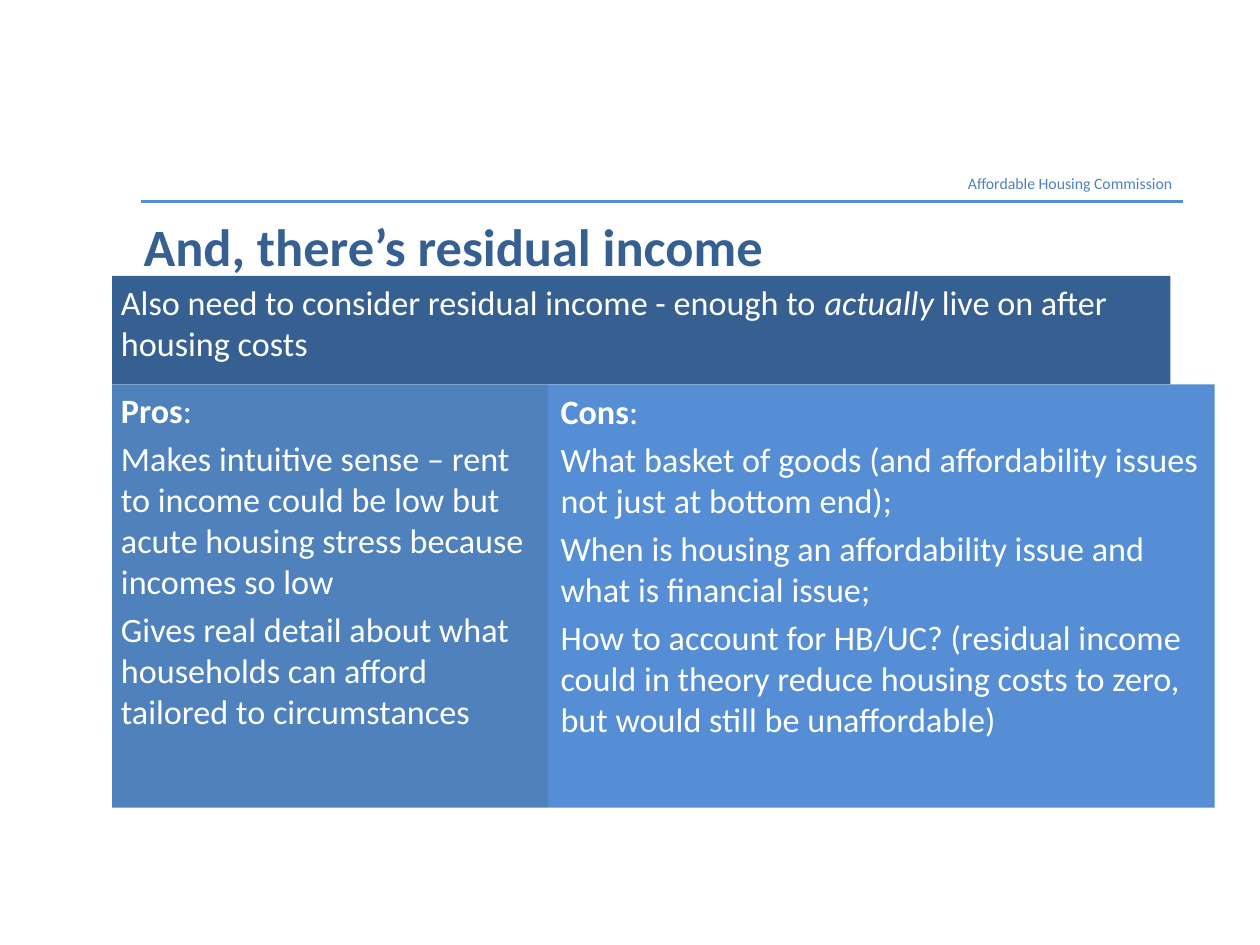
import pptx
import pptx.util
import pptx.dml.color
import pptx.enum.shapes
import pptx.enum.text
import lxml.etree
from pptx.util import Inches, Pt

THEME = {
    "font": "Calibri", "white": "FFFFFF", "navy": "376092",
    "blue": "4F81BD", "sky": "558ED5",
    "head": 9, "title": 30, "body": 19.5, "gap": 4, "rule": 2,
}

# Each paragraph is a list of (text, style) runs; style is "", "b" or "i".
HEAD = [[("Affordable Housing Commission", "")]]
TITLE = [[("And, there’s residual income", "b")]]
LEAD = [[("Also need to consider residual income - enough to ", ""),
         ("actually", "i"), (" live on after housing costs", "")]]
PROS = [
    [("Pros", "b"), (":", "")],
    [("Makes intuitive sense – rent to income could be low but acute "
      "housing stress because incomes so low", "")],
    [("Gives real detail about what households can afford tailored to "
      "circumstances", "")],
]
CONS = [
    [("Cons", "b"), (":", "")],
    [("What basket of goods (and affordability issues not just at bottom "
      "end);", "")],
    [("When is housing an affordability issue and what is financial "
      "issue;", "")],
    [("How to account for HB/UC? (residual income could in theory reduce "
      "housing costs to zero, but would still be unaffordable)", "")],
]

LEFT, TOP = 0.89, 2.19
LEAD_W, LEAD_H = 8.4, 0.86
PROS_W, CONS_W, PANEL_H = 3.46, 5.29, 3.36
WIDE, TIGHT = (0.1, 0.05), (0.07, 0.04)


def color(name):
    return pptx.dml.color.RGBColor.from_string(THEME[name])


def write(shape, paras, size, ink, inset, gap=0):
    """Fill the shape with styled paragraphs, aligned left and to the top."""
    frame = shape.text_frame
    frame.word_wrap = True
    frame.vertical_anchor = pptx.enum.text.MSO_ANCHOR.TOP
    frame.margin_left = frame.margin_right = Inches(inset[0])
    frame.margin_top = frame.margin_bottom = Inches(inset[1])
    for i, runs in enumerate(paras):
        para = frame.add_paragraph() if i else frame.paragraphs[0]
        para.alignment = pptx.enum.text.PP_ALIGN.LEFT
        para.space_before = Pt(gap)
        for text, style in runs:
            run = para.add_run()
            run.text = text
            run.font.name = THEME["font"]
            run.font.size = Pt(THEME[size])
            run.font.color.rgb = color(ink)
            run.font.bold = style == "b"
            run.font.italic = style == "i"
    return frame


def panel(slide, box, fill, paras, inset):
    shape = slide.shapes.add_shape(
        pptx.enum.shapes.MSO_SHAPE.RECTANGLE, *map(Inches, box))
    shape.shadow.inherit = False
    shape.fill.solid()
    shape.fill.fore_color.rgb = color(fill)
    shape.line.fill.background()
    write(shape, paras, "body", "white", inset, THEME["gap"])


def rule(slide, start, end, y):
    line = slide.shapes.add_connector(
        pptx.enum.shapes.MSO_CONNECTOR.STRAIGHT,
        Inches(start), Inches(y), Inches(end), Inches(y))
    line.line.color.rgb = color("sky")
    line.line.width = Pt(THEME["rule"])
    lxml.etree.SubElement(line._element.spPr, pptx.oxml.ns.qn("a:effectLst"))


def label(slide, box, paras, size, ink, inset):
    shape = slide.shapes.add_textbox(*map(Inches, box))
    return write(shape, paras, size, ink, inset)


def main():
    deck = pptx.Presentation()
    deck.slide_width, deck.slide_height = Inches(10), Inches(7.5)
    slide = deck.slides.add_slide(deck.slide_layouts[6])

    low = TOP + LEAD_H
    panel(slide, (LEFT + PROS_W, low, CONS_W, PANEL_H), "sky", CONS, WIDE)
    rule(slide, 1.12, 9.39, 1.6)

    head = label(slide, (1.08, 1.33, 8.32, 0.25), HEAD, "head", "blue", WIDE)
    head.paragraphs[0].alignment = pptx.enum.text.PP_ALIGN.RIGHT
    title = label(slide, (1.07, 1.7, 8.33, 0.49), TITLE, "title", "navy", TIGHT)
    title.vertical_anchor = pptx.enum.text.MSO_ANCHOR.MIDDLE
    title.paragraphs[0].space_before = Pt(6)

    panel(slide, (LEFT, low, PROS_W, PANEL_H), "blue", PROS, TIGHT)
    panel(slide, (LEFT, TOP, LEAD_W, LEAD_H), "navy", LEAD, TIGHT)
    deck.save("out.pptx")


if __name__ == "__main__":
    main()
